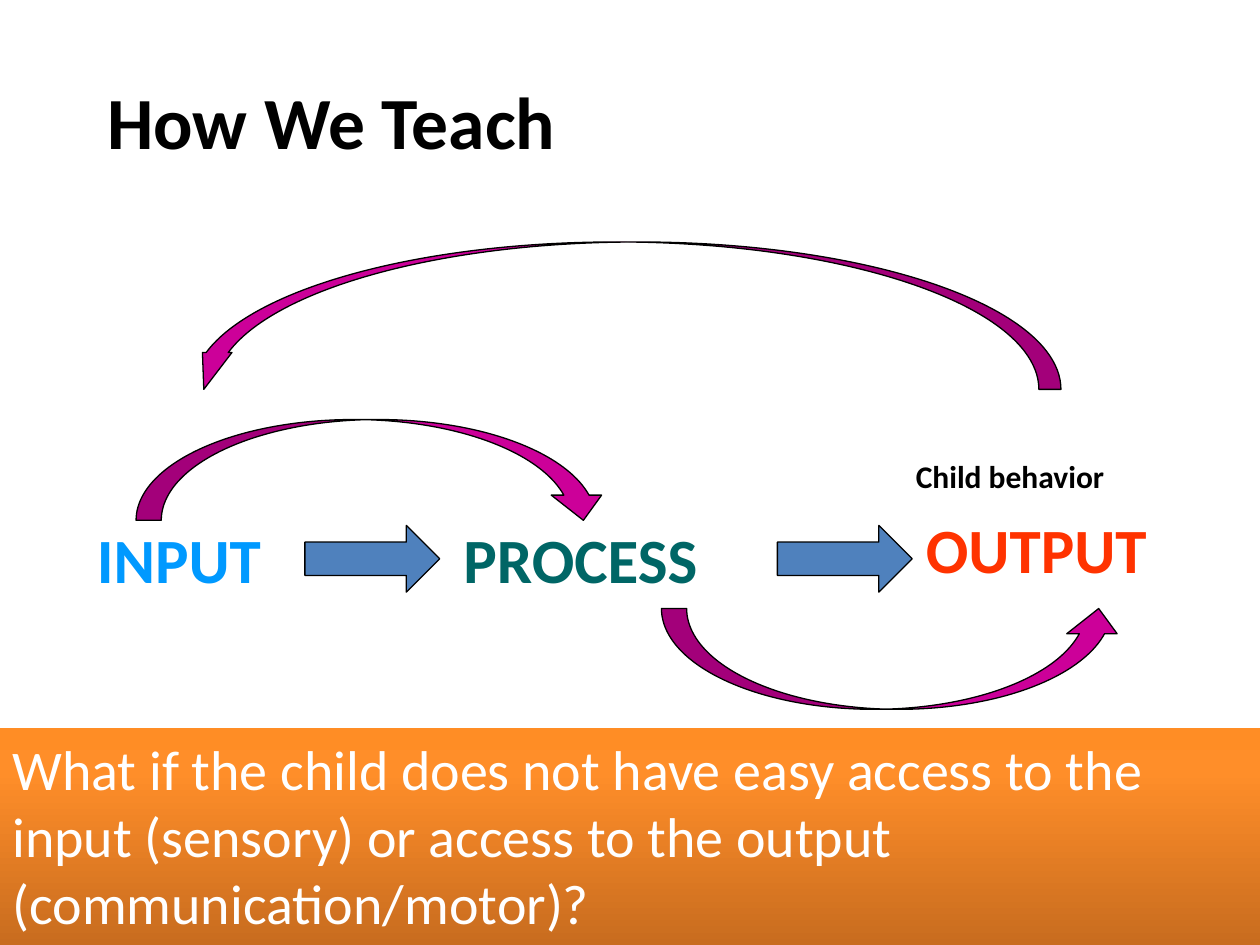
from copy import deepcopy

from pptx import Presentation
from pptx.dml.color import RGBColor
from pptx.enum.shapes import MSO_SHAPE
from pptx.enum.text import MSO_ANCHOR, PP_ALIGN
from pptx.util import Inches, Pt

RIGHT = MSO_SHAPE.RIGHT_ARROW
CURVED_UP = MSO_SHAPE.CURVED_UP_ARROW
CURVED_DOWN = MSO_SHAPE.CURVED_DOWN_ARROW
RECTANGLE = MSO_SHAPE.RECTANGLE
LEFT, TOP = PP_ALIGN.LEFT, MSO_ANCHOR.TOP

COLORS = {
    "black": "000000", "white": "FFFFFF",
    "input": "0099FF", "process": "006666", "output": "FF3300",
    "step": "4F81BD", "loop": "CC0099",
}
FONT = "Calibri"

# Content: positions are left, top, width, height in inches
TITLE = ("How We Teach", (0.75, 0.55, 9.25, 0.81), 42, "black")
LABELS = [
    ("INPUT", (0.67, 4.08, 2.08, 0.71), 36, "input"),
    ("PROCESS", (3.58, 4.08, 2.92, 0.71), 36, "process"),
    ("OUTPUT", (7.25, 4, 2.75, 0.71), 36, "output"),
    ("Child behavior", (7.17, 3.58, 2.83, 0.51), 18, "black"),
]
ARROWS = [  # kind, position, colour, adjustments, rotation
    (RIGHT, (2.42, 4.17, 1.07, 0.53), "step", (0.5, 0.5), 0),
    (RIGHT, (6.17, 4.17, 1.07, 0.53), "step", (0.5, 0.5), 0),
    (CURVED_UP, (1.5, 1.92, 6.92, 1.17), "loop", (0.15, 0.2, 0.25), 180),
    (CURVED_DOWN, (1.08, 3.33, 3.75, 0.8), "loop", (0.25, 0.5, 0.25), 0),
    (CURVED_UP, (5.25, 4.83, 3.67, 0.8), "loop", (0.25, 0.5, 0.25), 0),
]
QUESTION = ("What if the child does not have easy access to the input (sensory) "
            "or access to the output (communication/motor)?")
QUESTION_BOX = (0, 5.78, 10, 1.72)
GRADIENT = [(0, "C86C1F"), (0.8, "FF8E29"), (1, "FF8D25")]


def rgb(name):
    return RGBColor.from_string(COLORS[name])


def inches(box):
    return [Inches(v) for v in box]


def write(shape, text, size, color, bold=True):
    tf = shape.text_frame
    tf.word_wrap = True
    tf.vertical_anchor = TOP
    p = tf.paragraphs[0]
    p.text = text
    p.alignment = LEFT
    p.font.name, p.font.size, p.font.bold = FONT, Pt(size), bold
    p.font.color.rgb = rgb(color)


prs = Presentation()
prs.slide_width, prs.slide_height = Inches(10), Inches(7.5)
s = prs.slides.add_slide(prs.slide_layouts[5])

# Title
text, box, size, color = TITLE
title = s.shapes.title
title.left, title.top, title.width, title.height = inches(box)
write(title, text, size, color)

# Stage labels
for text, box, size, color in LABELS:
    write(s.shapes.add_textbox(*inches(box)), text, size, color)

# Step arrows and feedback loops
for kind, box, color, adjustments, rotation in ARROWS:
    arrow = s.shapes.add_shape(kind, *inches(box))
    for i, value in enumerate(adjustments):
        arrow.adjustments[i] = value
    arrow.rotation = rotation
    arrow.shadow.inherit = False
    arrow.fill.solid()
    arrow.fill.fore_color.rgb = rgb(color)
    arrow.line.color.rgb = rgb("black")
    arrow.line.width = Pt(0.75)

# Question banner, with a third stop added to the default gradient
banner = s.shapes.add_shape(RECTANGLE, *inches(QUESTION_BOX))
banner.shadow.inherit = False
banner.line.fill.background()
banner.fill.gradient()
banner.fill.gradient_angle = 90
stop_list = banner._element.spPr.find(".//{*}gsLst")
stop_list.append(deepcopy(stop_list[-1]))
for stop, (position, color) in zip(banner.fill.gradient_stops, GRADIENT):
    stop.position = position
    stop.color.rgb = RGBColor.from_string(color)
write(banner, QUESTION, 32, "white", bold=False)

prs.save("out.pptx")
